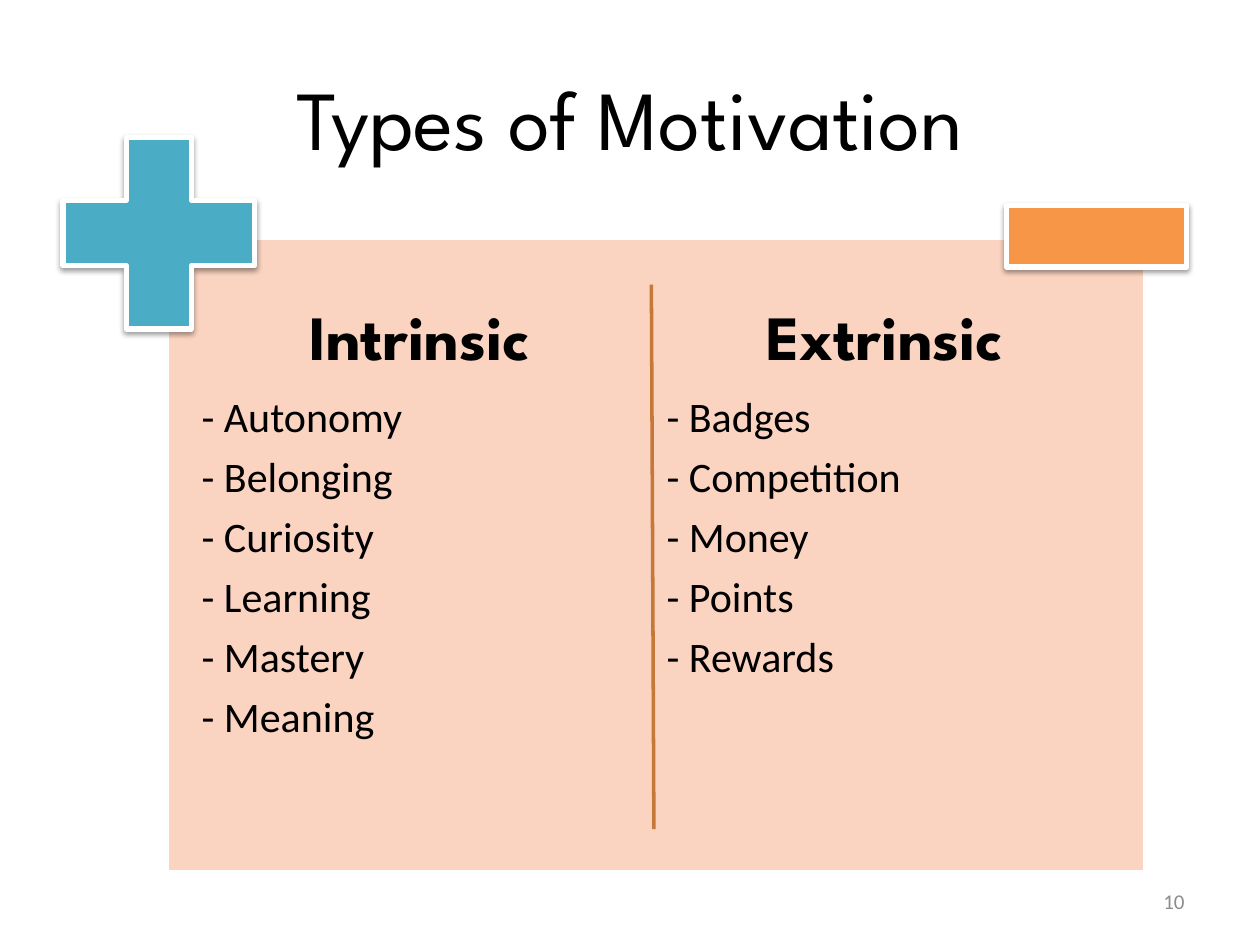
from dataclasses import dataclass

from lxml.etree import SubElement
from pptx import Presentation
from pptx.dml.color import RGBColor
from pptx.enum.shapes import MSO_CONNECTOR, MSO_SHAPE
from pptx.enum.text import MSO_ANCHOR, MSO_AUTO_SIZE, PP_ALIGN
from pptx.oxml import parse_xml
from pptx.oxml.ns import nsdecls, qn
from pptx.util import Inches, Pt


@dataclass(frozen=True)
class Theme:
    panel: str = "FBD3C1"
    plus: str = "4BACC6"
    minus: str = "F79646"
    divider: str = "C67838"
    outline: str = "FFFFFF"
    text: str = "000000"
    muted: str = "8C8C8C"
    display_font: str = "League Spartan"
    body_font: str = "Calibri"
    title_size: int = 48
    heading_size: int = 36
    body_size: int = 24
    number_size: int = 12


SHADOW = f"""<a:effectLst {nsdecls("a")}>
  <a:outerShdw blurRad="{Pt(3.1)}" dist="{Pt(1.6)}" dir="5400000" rotWithShape="0">
    <a:srgbClr val="000000"><a:alpha val="38000"/></a:srgbClr>
  </a:outerShdw>
</a:effectLst>"""


def write(p, text, *, font, size, color, bold=False, align=PP_ALIGN.LEFT):
    """Add one formatted run to a paragraph."""
    p.alignment = align
    r = p.add_run()
    r.text = text
    r.font.name = font
    r.font.size = Pt(size)
    r.font.bold = bold
    r.font.color.rgb = RGBColor.from_string(color)


class SlideBuilder:
    def __init__(self, slide, theme):
        self.s = slide
        self.theme = theme

    def place(self, sp, left, top, width, height):
        sp.left, sp.top = Inches(left), Inches(top)
        sp.width, sp.height = Inches(width), Inches(height)

    def title(self, text, *box):
        t = self.theme
        sp = self.s.shapes.title
        self.place(sp, *box)
        tf = sp.text_frame
        tf.vertical_anchor = MSO_ANCHOR.MIDDLE
        write(tf.paragraphs[0], text, font=t.display_font, size=t.title_size,
              color=t.text, align=PP_ALIGN.CENTER)

    def column(self, idx, heading, items, *box):
        t = self.theme
        sp = self.s.placeholders[idx]
        self.place(sp, *box)
        tf = sp.text_frame
        tf.word_wrap = True
        tf.auto_size = MSO_AUTO_SIZE.NONE
        tf.vertical_anchor = MSO_ANCHOR.TOP
        tf.margin_left = tf.margin_right = Inches(0.07)
        tf.margin_top = tf.margin_bottom = Inches(0.07)

        p = tf.paragraphs[0]
        self.list_spacing(p)
        write(p, heading, font=t.display_font, size=t.heading_size,
              color=t.text, bold=True, align=PP_ALIGN.CENTER)
        for item in items:
            p = tf.add_paragraph()
            self.list_spacing(p)
            write(p, f"- {item}", font=t.body_font, size=t.body_size, color=t.text)

    def list_spacing(self, p):
        """Tight lines, a gap of 35% after each, and no automatic bullet."""
        p.line_spacing = 0.9
        p.space_before = p.space_after = Pt(0)
        pPr = p._p.get_or_add_pPr()
        pPr.set("marL", "0")
        pPr.set("indent", "0")
        gap = pPr.find(qn("a:spcAft"))
        gap.remove(gap[0])
        SubElement(gap, qn("a:spcPct"), val="35000")
        SubElement(pPr, qn("a:buNone"))

    def shape(self, kind, fill, *box, line_width=3, shadow=True):
        sp = self.s.shapes.add_shape(kind, *map(Inches, box))
        sp.fill.solid()
        sp.fill.fore_color.rgb = RGBColor.from_string(fill)
        sp.line.color.rgb = RGBColor.from_string(self.theme.outline)
        sp.line.width = Pt(line_width)
        if shadow:
            sp._element.spPr.append(parse_xml(SHADOW))
        else:
            sp.shadow.inherit = False
        return sp

    def panel(self, *box):
        sp = self.shape(MSO_SHAPE.RECTANGLE, self.theme.panel, *box,
                        line_width=2, shadow=False)
        # Behind the placeholders, right after the two group property elements
        self.s.shapes._spTree.insert(2, sp._element)

    def divider(self, *ends):
        line = self.s.shapes.add_connector(MSO_CONNECTOR.STRAIGHT, *map(Inches, ends))
        line.line.color.rgb = RGBColor.from_string(self.theme.divider)
        line.line.width = Pt(2)
        SubElement(line._element.spPr, qn("a:effectLst"))

    def page_number(self, text, *box):
        t = self.theme
        tf = self.s.shapes.add_textbox(*map(Inches, box)).text_frame
        tf.word_wrap = True
        tf.vertical_anchor = MSO_ANCHOR.MIDDLE
        write(tf.paragraphs[0], text, font=t.body_font, size=t.number_size,
              color=t.muted, align=PP_ALIGN.RIGHT)


COLUMNS = [
    ("Intrinsic", ["Autonomy", "Belonging", "Curiosity",
                   "Learning", "Mastery", "Meaning"]),
    ("Extrinsic", ["Badges", "Competition", "Money", "Points", "Rewards"]),
]


def main():
    prs = Presentation()
    prs.slide_width, prs.slide_height = Inches(10), Inches(7.5)
    theme = Theme()
    two_content = prs.slide_layouts[3]
    slide = SlideBuilder(prs.slides.add_slide(two_content), theme)

    # Title
    slide.title("Types of Motivation", 0.5, 0.3, 9, 1.25)

    # Panel with its two lists
    slide.panel(1.33, 1.89, 7.76, 5.03)
    for i, (heading, items) in enumerate(COLUMNS):
        slide.column(i + 1, heading, items, 1.53 + i * 3.69, 2.36, 3.6, 3.43)

    # Plus and minus signs on the corners
    plus = slide.shape(MSO_SHAPE.CROSS, theme.plus, 0.5, 1.09, 1.52, 1.52)
    plus.adjustments[0] = 0.33
    slide.shape(MSO_SHAPE.RECTANGLE, theme.minus, 7.99, 1.63, 1.43, 0.49)

    # Divider and page number
    slide.divider(5.17, 2.26, 5.19, 6.58)
    slide.page_number("10", 7.17, 6.95, 2.33, 0.4)

    prs.save("out.pptx")


if __name__ == "__main__":
    main()
